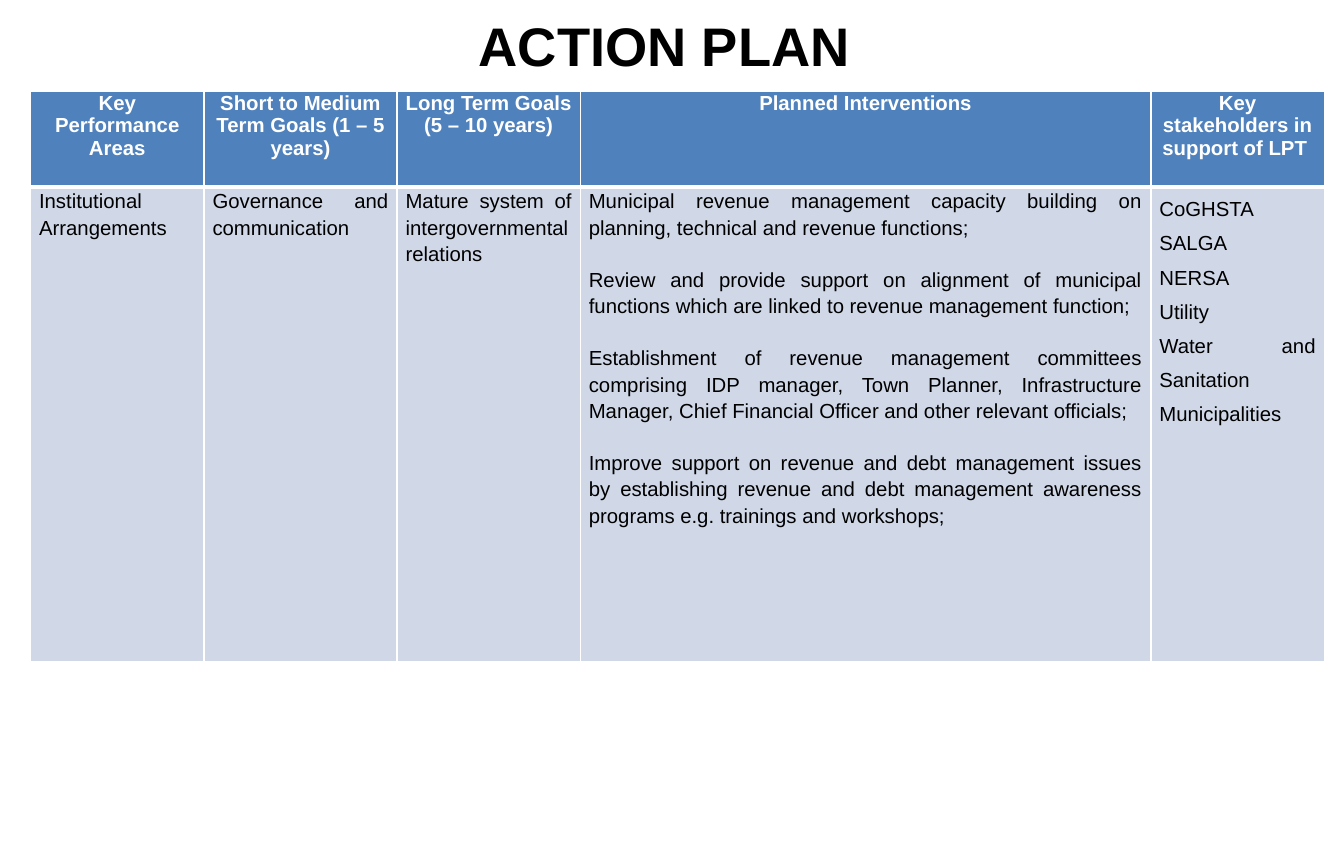
"""Build the action plan slide with its table of goals and interventions."""
from lxml import etree
from pptx import Presentation
from pptx.dml.color import RGBColor
from pptx.enum.text import MSO_ANCHOR, PP_ALIGN
from pptx.oxml.ns import qn
from pptx.util import Emu, Pt

PX = 9144
CENTER, JUSTIFY = PP_ALIGN.CENTER, PP_ALIGN.JUSTIFY
MIDDLE, TOP = MSO_ANCHOR.MIDDLE, MSO_ANCHOR.TOP
BLACK = RGBColor(0x00, 0x00, 0x00)
WHITE = RGBColor(0xFF, 0xFF, 0xFF)
HEADER_BLUE = RGBColor(0x4F, 0x81, 0xBD)
BODY_BLUE = RGBColor(0xD0, 0xD8, 0xE8)
FONT = "Arial"

COLUMN_WIDTHS = [142, 158, 150, 467, 142]
ROW_HEIGHTS = [78, 389]
HEADINGS = [
    "Key Performance Areas",
    "Short to Medium Term Goals (1 – 5 years)",
    "Long Term Goals (5 – 10 years)",
    "Planned Interventions",
    "Key stakeholders in support of LPT ",
]
INTERVENTIONS = [
    "Municipal revenue management capacity building on planning, technical and revenue functions;",
    "Review and provide support on alignment of municipal functions which are linked to "
    "revenue management function;",
    "Establishment of revenue management committees comprising IDP manager, Town Planner, "
    "Infrastructure Manager, Chief Financial Officer and other relevant officials;",
    "Improve support on revenue and debt management issues by establishing revenue and debt "
    "management awareness programs e.g. trainings and workshops;",
]
STAKEHOLDERS = ["CoGHSTA ", "SALGA", "NERSA", "Utility", "Water and Sanitation", "Municipalities"]
PLAN = [
    ["Institutional Arrangements"],
    ["Governance and communication"],
    ["Mature system of intergovernmental relations"],
    INTERVENTIONS,
    STAKEHOLDERS,
]


def style_text(frame, size, color, bold, align, spacing=1.0, gap=0):
    for index, paragraph in enumerate(frame.paragraphs):
        paragraph.alignment = align
        paragraph.line_spacing = spacing
        paragraph.space_before = Pt(gap if index else 0)
        for run in paragraph.runs:
            run.font.name = FONT
            run.font.size = Pt(size)
            run.font.bold = bold
            run.font.color.rgb = color


def set_borders(cell, widths):
    properties = cell._tc.get_or_add_tcPr()
    for side, points in widths.items():
        line = etree.SubElement(properties, qn(f"a:ln{side}"), w=str(Pt(points)))
        fill = etree.SubElement(line, qn("a:solidFill"))
        etree.SubElement(fill, qn("a:srgbClr"), val=str(WHITE))


prs = Presentation()
prs.slide_width = Emu(1100 * PX)
prs.slide_height = Emu(700 * PX)
slide = prs.slides.add_slide(prs.slide_layouts[6])

title = slide.shapes.add_textbox(*(Emu(n * PX) for n in (55, 8, 990, 58))).text_frame
title.word_wrap = True
title.vertical_anchor = MIDDLE
title.text = "ACTION PLAN "
style_text(title, 32, BLACK, True, CENTER)

table_box = [25, 75, sum(COLUMN_WIDTHS), sum(ROW_HEIGHTS)]
plan_table = slide.shapes.add_table(
    len(ROW_HEIGHTS), len(COLUMN_WIDTHS), *(Emu(n * PX) for n in table_box)
).table
for column, width in zip(plan_table.columns, COLUMN_WIDTHS):
    column.width = Emu(width * PX)
for row, height in zip(plan_table.rows, ROW_HEIGHTS):
    row.height = Emu(height * PX)

for col, (heading, entries) in enumerate(zip(HEADINGS, PLAN)):
    heading_cell, entry_cell = plan_table.cell(0, col), plan_table.cell(1, col)
    set_borders(heading_cell, {"L": 1, "R": 1, "T": 1, "B": 3})
    set_borders(entry_cell, {"L": 1, "R": 1, "T": 3, "B": 1})
    for cell, fill_color in ((heading_cell, HEADER_BLUE), (entry_cell, BODY_BLUE)):
        cell.fill.solid()
        cell.fill.fore_color.rgb = fill_color
        cell.vertical_anchor = TOP
        cell.margin_left = cell.margin_right = Emu(7 * PX)
        cell.margin_top = cell.margin_bottom = 0
    heading_cell.text_frame.text = heading
    style_text(heading_cell.text_frame, 12, WHITE, True, CENTER)
    entry_cell.text_frame.text = "\n".join(entries)
    spacing = 1.5 if entries is STAKEHOLDERS else 1.15
    gap = 15.4 if entries is INTERVENTIONS else 0
    style_text(entry_cell.text_frame, 12, BLACK, False, JUSTIFY, spacing, gap)

prs.save("out.pptx")
